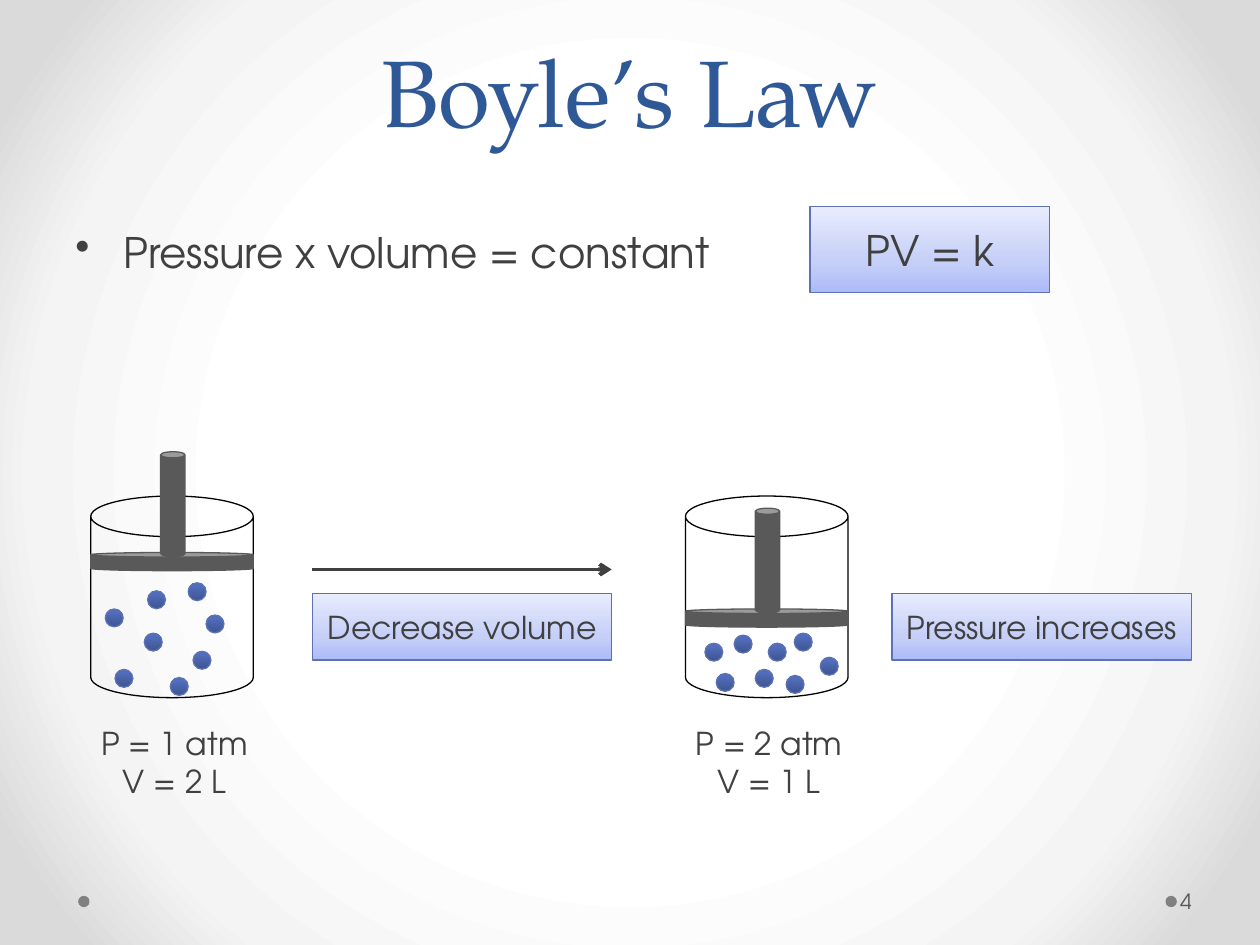
from dataclasses import dataclass

from lxml import etree
from pptx import Presentation
from pptx import util as u
from pptx.dml.color import RGBColor
from pptx.enum import shapes, text
from pptx.oxml.ns import qn

COLORS = {
    "title": "2F5897", "text": "404040", "number": "595959", "dot": "808080",
    "piston": "595959", "edge": "5C72B2", "glass": "000000",
}
SHADES = {
    "backdrop": [(50, "FFFFFF"), (76, "F4F4F4"), (92, "DADADA")],
    "label": [(0, "ADBBF6"), (35, "C5CFF8"), (100, "E8ECFD")],
    "particle": [(0, "3E5490"), (80, "516DBB"), (100, "4F6CBE")],
}
BODY, HEADING = "TeX Gyre Adventor", "TeX Gyre Pagella"
CELL = u.Inches(0.25)
LOOSE = [(.09, .56), (.35, .47), (.71, .59), (.33, .68),
         (.63, .77), (.60, .43), (.15, .86), (.49, .90)]
PACKED = [(.12, .73), (.19, .88), (.30, .69), (.43, .86),
          (.62, .89), (.51, .73), (.67, .68), (.83, .80)]


@dataclass
class Box:
    """A rectangle in EMU that can hand out shares of itself."""
    x: int
    y: int
    w: int
    h: int

    def share(self, x, y, w, h):
        """Return the inner box given as shares of this box."""
        return Box(int(self.x + x * self.w), int(self.y + y * self.h),
                   int(w * self.w), int(h * self.h))

    def bounds(self):
        """Return left, top, width and height."""
        return self.x, self.y, self.w, self.h


def cells(col, row, cols, rows):
    """Return a box measured on the quarter-inch grid."""
    return Box(*(int(n * CELL) for n in (col, row, cols, rows)))


def rgb(name):
    """Look up a named colour."""
    return RGBColor.from_string(COLORS[name])


def shade(fill, owner, name, radial=False):
    """Give a fill a named gradient, running upwards or from the centre."""
    fill.gradient()
    grad = owner.find(".//" + qn("a:gradFill"))
    for child in list(grad):
        grad.remove(child)
    stops = etree.SubElement(grad, qn("a:gsLst"))
    for pos, color in SHADES[name]:
        gs = etree.SubElement(stops, qn("a:gs"), pos=str(pos * 1000))
        etree.SubElement(gs, qn("a:srgbClr"), val=color)
    if radial:
        way = etree.SubElement(grad, qn("a:path"), {"path": "circle"})
        etree.SubElement(way, qn("a:fillToRect"), dict.fromkeys("ltrb", "50000"))
    else:
        etree.SubElement(grad, qn("a:lin"), ang="16200000", scaled="0")


def add_shape(s, kind, box, fill=None, line=None):
    """Add a preset shape with a plain, graded or empty fill."""
    sp = s.shapes.add_shape(kind, *box.bounds())
    sp.shadow.inherit = False
    if fill in SHADES:
        shade(sp.fill, sp._element, fill)
    elif fill:
        sp.fill.solid()
        sp.fill.fore_color.rgb = rgb(fill)
    else:
        sp.fill.background()
    if line:
        sp.line.color.rgb = rgb(line)
        sp.line.width = u.Pt(0.75)
    else:
        sp.line.fill.background()
    return sp


def write(tf, lines, size, color="text", font=BODY, align=text.PP_ALIGN.CENTER):
    """Fill a text frame with evenly formatted paragraphs."""
    tf.word_wrap = True
    tf.text = "\n".join(lines)
    for p in tf.paragraphs:
        p.alignment = align
        p.font.size, p.font.name = u.Pt(size), font
        p.font.color.rgb = rgb(color)


def add_text(s, box, lines, size, **style):
    """Add a text box and return its frame."""
    tf = s.shapes.add_textbox(*box.bounds()).text_frame
    write(tf, lines, size, **style)
    return tf


def add_title(s, box, words):
    """Place and format the title placeholder."""
    sp = s.shapes.title
    sp.left, sp.top, sp.width, sp.height = box.bounds()
    write(sp.text_frame, [words], 54, "title", HEADING)
    sp.text_frame.vertical_anchor = text.MSO_ANCHOR.BOTTOM
    sp.text_frame.paragraphs[0].line_spacing = u.Pt(58)


def add_bullet(s, box, words):
    """Add the bulleted statement."""
    tf = add_text(s, box, [words], 24, align=text.PP_ALIGN.LEFT)
    props = tf.paragraphs[0]._p.get_or_add_pPr()
    props.set("marL", str(u.Inches(0.38)))
    props.set("indent", str(-u.Inches(0.38)))
    bullet = etree.Element(qn("a:buChar"), char="•")
    props.insert(0, bullet)


def add_label(s, box, words, size):
    """Add a shaded box with centred words."""
    sp = add_shape(s, shapes.MSO_SHAPE.RECTANGLE, box, "label", "edge")
    write(sp.text_frame, [words], size)
    sp.text_frame.vertical_anchor = text.MSO_ANCHOR.MIDDLE


def add_cylinder(s, box, level, particles, caption):
    """Draw a gas cylinder with its piston at a level, and its caption."""
    can = shapes.MSO_SHAPE.CAN
    add_shape(s, can, box, line="glass")
    add_shape(s, can, box.share(0, level, 1, .09), "piston", "piston")
    add_shape(s, can, box.share(.43, level - .5, .15, .52), "piston", "piston")
    for x, y in particles:
        dot = box.share(x, y, .11, .09)
        dot.h = dot.w
        add_shape(s, shapes.MSO_SHAPE.OVAL, dot, "particle", "edge")
    add_text(s, box.share(-.07, 1.1, 1.17, .44), caption, 18)


def add_arrow(s, box):
    """Draw an arrow along the top of a box."""
    arrow = s.shapes.add_connector(shapes.MSO_CONNECTOR.STRAIGHT,
                                   box.x, box.y, box.x + box.w, box.y)
    arrow.line.color.rgb = rgb("text")
    arrow.line.width = u.Pt(2.25)
    props = arrow._element.spPr
    etree.SubElement(props.find(qn("a:ln")), qn("a:tailEnd"), type="arrow")
    etree.SubElement(props, qn("a:effectLst"))


def add_footer(s, box, number):
    """Add the two footer dots and the slide number."""
    for x in (0, 1):
        dot = box.share(x, 0, 0, 0)
        dot.w = dot.h = box.h
        add_shape(s, shapes.MSO_SHAPE.OVAL, dot, "dot")
    tf = add_text(s, box.share(1.01, -1.78, .07, 4.44), [number], 12,
                  color="number", align=text.PP_ALIGN.LEFT)
    tf.margin_left = u.Inches(0.03)
    tf.margin_right = u.Inches(0.05)
    tf.vertical_anchor = text.MSO_ANCHOR.MIDDLE


def main():
    """Build the slide and save it."""
    prs = Presentation()
    prs.slide_width, prs.slide_height = 40 * CELL, 30 * CELL
    s = prs.slides.add_slide(prs.slide_layouts[5])
    shade(s.background.fill, s._element, "backdrop", radial=True)
    add_title(s, cells(2, 0, 36, 4.84), "Boyle’s Law")
    add_bullet(s, cells(2, 7, 23, 2), "Pressure x volume = constant")
    add_label(s, cells(25.72, 6.56, 7.6, 2.72), "PV = k", 24)
    add_cylinder(s, cells(2.88, 15.75, 5.16, 6.4), .28, LOOSE, ["P = 1 atm", "V = 2 L"])
    add_cylinder(s, cells(21.76, 15.75, 5.16, 6.4), .56, PACKED, ["P = 2 atm", "V = 1 L"])
    for col, words in ((9.92, "Decrease volume"), (28.32, "Pressure increases")):
        add_label(s, cells(col, 18.84, 9.5, 2.12), words, 18)
    add_arrow(s, cells(9.92, 18.08, 9.5, 0))
    add_footer(s, cells(2.48, 28.44, 34.52, .36), "4")
    prs.save("out.pptx")


if __name__ == "__main__":
    main()
